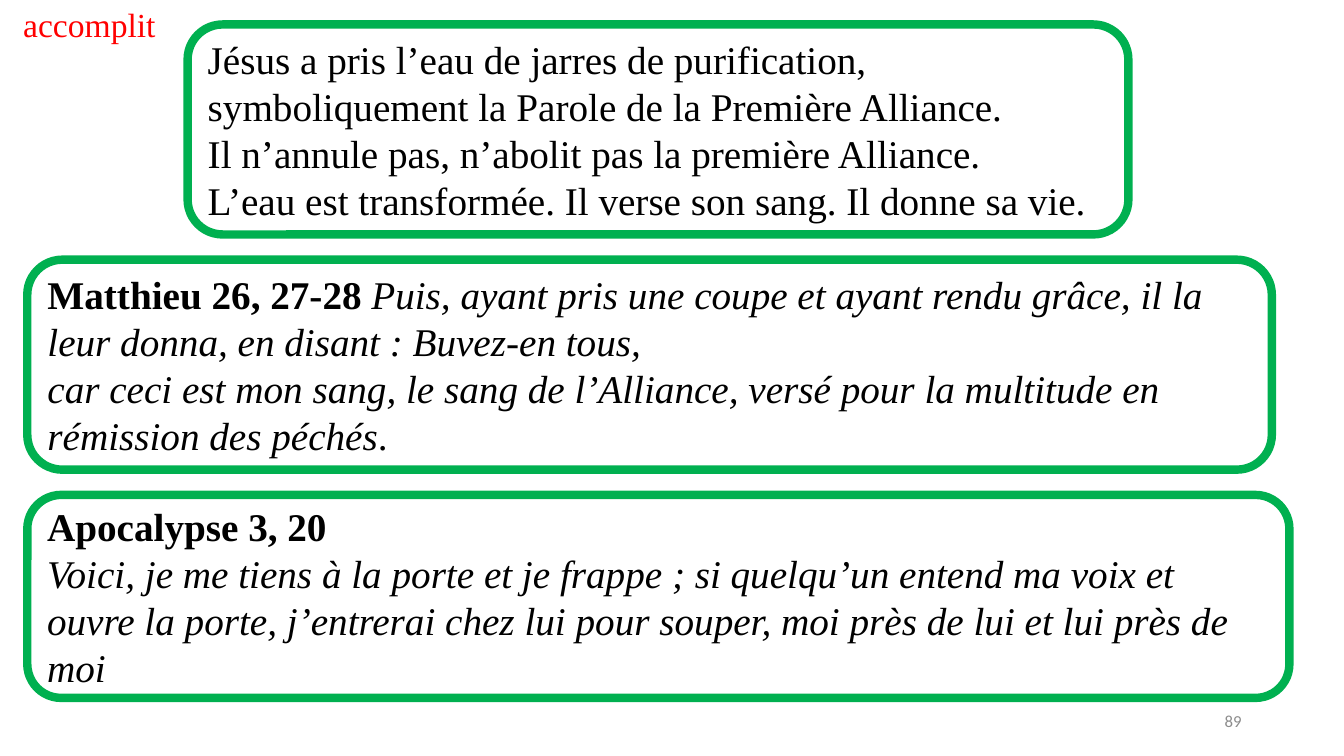
from pptx import Presentation
from pptx.dml.color import RGBColor
from pptx.enum.shapes import MSO_SHAPE
from pptx.enum.text import MSO_ANCHOR, PP_ALIGN
from pptx.util import Pt

COLORS = {"green": "00B050", "black": "000000", "red": "FF0000", "gray": "8C8C8C"}
SERIF = "Times New Roman"

PLAIN, BOLD, ITALIC = "plain", "bold", "italic"
FRAMES = [
    ((134, 17.5, 672, 150), [
        [("Jésus a pris l’eau de jarres de purification, \n"
          "symboliquement la Parole de la Première Alliance.", PLAIN)],
        [("Il n’annule pas, n’abolit pas la première Alliance.", PLAIN)],
        [("L’eau est transformée. Il verse son sang. Il donne sa vie.", PLAIN)],
    ]),
    ((19.5, 185.5, 889, 150), [
        [("Matthieu 26, 27-28 ", BOLD),
         ("Puis, ayant pris une coupe et ayant rendu grâce, il la leur donna, "
          "en disant : Buvez-en tous,", ITALIC)],
        [("car ceci est mon sang, le sang de l’Alliance, versé pour la multitude "
          "en rémission des péchés", ITALIC), (".", PLAIN)],
    ]),
    ((19.5, 353.5, 901.5, 145), [
        [("Apocalypse 3, 20", BOLD)],
        [("Voici, je me tiens à la porte et je frappe ; si quelqu’un entend ma voix "
          "et ouvre la porte, j’entrerai chez lui pour souper, moi près de lui "
          "et lui près de moi", ITALIC)],
    ]),
]
LABELS = [
    ("accomplit", (9.5, -0.7, 128, 36), SERIF, 24, "red", PP_ALIGN.LEFT, MSO_ANCHOR.TOP),
    ("89", (678, 500.5, 216, 28.75), "Calibri", 12, "gray", PP_ALIGN.RIGHT, MSO_ANCHOR.MIDDLE),
]


def color(name):
    return RGBColor.from_string(COLORS[name])


def set_paragraph(paragraph, typeface, size, color_name, alignment):
    paragraph.alignment = alignment
    paragraph.font.name = typeface
    paragraph.font.size = Pt(size)
    paragraph.font.color.rgb = color(color_name)


def add_runs(paragraph, pieces):
    for text, style in pieces:
        for index, line in enumerate(text.split("\n")):
            if index:
                paragraph.add_line_break()
            run = paragraph.add_run()
            run.text = line
            run.font.bold = style == BOLD
            run.font.italic = style == ITALIC


def add_frame(slide, box, paragraphs):
    shape = slide.shapes.add_shape(MSO_SHAPE.ROUNDED_RECTANGLE, *map(Pt, box))
    shape.shadow.inherit = False
    shape.fill.background()
    shape.line.color.rgb = color("green")
    shape.line.width = Pt(6)
    text_frame = shape.text_frame
    text_frame.word_wrap = True
    text_frame.vertical_anchor = MSO_ANCHOR.MIDDLE
    for index, pieces in enumerate(paragraphs):
        paragraph = text_frame.add_paragraph() if index else text_frame.paragraphs[0]
        set_paragraph(paragraph, SERIF, 28, "black", PP_ALIGN.LEFT)
        add_runs(paragraph, pieces)


def add_label(slide, text, box, typeface, size, color_name, alignment, anchor):
    text_frame = slide.shapes.add_textbox(*map(Pt, box)).text_frame
    text_frame.word_wrap = True
    text_frame.vertical_anchor = anchor
    paragraph = text_frame.paragraphs[0]
    paragraph.text = text
    set_paragraph(paragraph, typeface, size, color_name, alignment)


def main():
    presentation = Presentation()
    presentation.slide_width, presentation.slide_height = Pt(960), Pt(540)
    slide = presentation.slides.add_slide(presentation.slide_layouts[6])
    for box, paragraphs in FRAMES:
        add_frame(slide, box, paragraphs)
    for label in LABELS:
        add_label(slide, *label)
    presentation.save("out.pptx")


if __name__ == "__main__":
    main()
